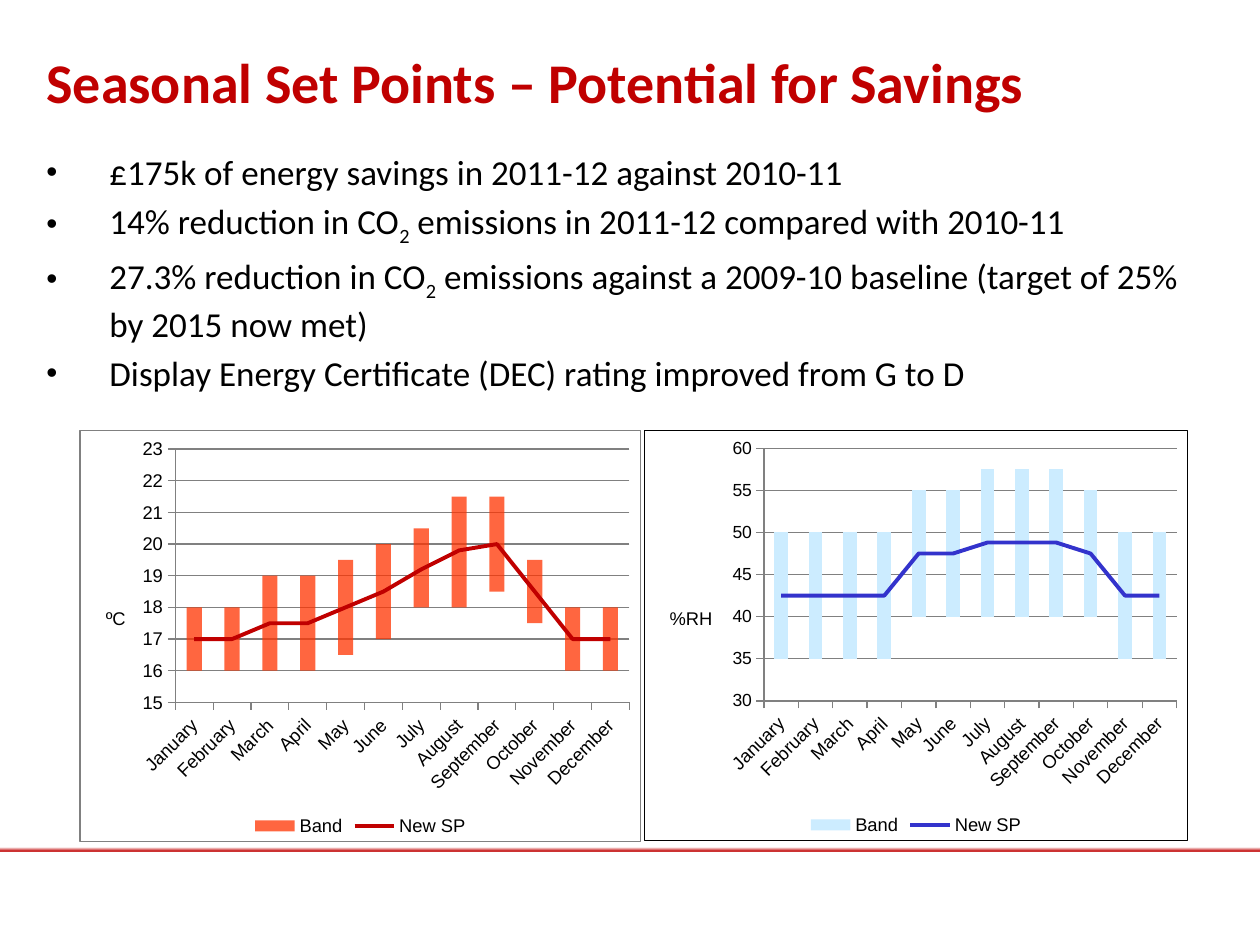
from pptx import Presentation
from pptx.chart.data import CategoryChartData as Data
from pptx.dml.color import RGBColor as Rgb
from pptx.enum.chart import XL_CHART_TYPE as Kind, XL_LEGEND_POSITION as Spot
from pptx.enum.chart import XL_MARKER_STYLE as Mark, XL_TICK_MARK as Tick
from pptx.enum.shapes import MSO_SHAPE as Shape
from pptx.oxml import parse_xml
from pptx.oxml.ns import nsdecls, qn
from pptx.util import Inches, Pt

WIDE, HIGH = Inches(10), Inches(7.5)
LEFT, SPAN = 0.027, 0.945
MONTHS = ["January", "February", "March", "April", "May", "June", "July",
          "August", "September", "October", "November", "December"]
POINTS = [
    "£175k of energy savings in 2011-12 against 2010-11",
    "14% reduction in CO|2| emissions in 2011-12 compared with 2010-11",
    "27.3% reduction in CO|2| emissions against a 2009-10 baseline "
    "(target of 25% by 2015 now met)",
    "Display Energy Certificate (DEC) rating improved from G to D",
]
HEAT = dict(
    box=(0.063, 0.455, 0.446, 0.436), plot=(0.17, 0.045, 0.81, 0.617),
    unit="ºC", low=15, high=23, step=1, size=10.5, edge="808080",
    band="FF3300", solid=75, line="C00000",
    base=[16, 16, 16, 16, 16.5, 17, 18, 18, 18.5, 17.5, 16, 16],
    range=[2, 2, 3, 3, 3, 3, 2.5, 3.5, 3, 2, 2, 2],
    goal=[17, 17, 17.5, 17.5, 18, 18.5, 19.2, 19.8, 20, 18.5, 17, 17])
DAMP = dict(
    box=(0.511, 0.455, 0.432, 0.435), plot=(0.22, 0.043, 0.76, 0.617),
    unit="%RH", low=30, high=60, step=5, size=10, edge="000000",
    band="CCECFF", solid=100, line="3333CC",
    base=[35] * 4 + [40] * 6 + [35] * 2,
    range=[15] * 6 + [17.5] * 3 + [15] * 3,
    goal=[42.5] * 4 + [47.5] * 2 + [48.8] * 3 + [47.5] + [42.5] * 2)


def place(x, y, w, h):
    """Turn shares of the slide into lengths."""
    return int(x * WIDE), int(y * HIGH), int(w * WIDE), int(h * HIGH)


def tint(color, code):
    """Set a colour from a hex string."""
    color.rgb = Rgb.from_string(code)


def style(font, size, code="000000", name="Calibri", bold=False):
    """Give a font its size, colour, face and weight."""
    for key, value in dict(size=Pt(size), name=name, bold=bold).items():
        setattr(font, key, value)
    tint(font.color, code)


def paint(form, code, width):
    """Draw a line in one colour and width."""
    tint(form.line.color, code)
    form.line.width = Pt(width)


def add_rule(slide):
    """Add the fading red rule near the foot."""
    bar = slide.shapes.add_shape(Shape.RECTANGLE, *place(0, 0.891, 1, 0.011))
    bar.shadow.inherit = False
    bar.line.fill.background()
    bar.fill.gradient()
    bar.fill.gradient_angle = 90
    for stop, (spot, code) in zip(bar.fill.gradient_stops,
                                  [(0.18, "CC3333"), (0.5, "FFFFFF")]):
        stop.position = spot
        tint(stop.color, code)


def add_frame(slide, y, h):
    """Add a wrapping text box across the slide."""
    frame = slide.shapes.add_textbox(*place(LEFT, y, SPAN, h)).text_frame
    frame.word_wrap = True
    return frame


def add_title(slide, text):
    """Add the heading."""
    run = add_frame(slide, 0.044, 0.071).paragraphs[0].add_run()
    run.text = text
    style(run.font, 32, "C00000", bold=True)


def add_list(slide, items):
    """Add bullets, with text between bars set as subscript."""
    frame = add_frame(slide, 0.153, 0.271)
    for row, item in enumerate(items):
        para = frame.add_paragraph() if row else frame.paragraphs[0]
        props = para._p.get_or_add_pPr()
        for key, value in dict(marL=Inches(0.5), indent=-Inches(0.5)).items():
            props.set(key, str(value))
        for tag in ('buSzPct val="90000"', 'buFont typeface="Arial"',
                    'buChar char="•"'):
            props.append(parse_xml(f"<a:{tag} {nsdecls('a')}/>"))
        para.space_before = Pt(4 if row else 0)
        for part, text in enumerate(item.split("|")):
            run = para.add_run()
            run.text = text
            style(run.font, 20)
            if part % 2:
                run._r.get_or_add_rPr().set("baseline", "-25000")


def pin(node, index, **shares):
    """Fix the place of a chart part by shares of the chart."""
    for old in node.findall(qn("c:layout")):
        node.remove(old)
    inner = '<c:layoutTarget val="inner"/>' if "w" in shares else ""
    modes = "".join(f'<c:{k}Mode val="edge"/>' for k in "xy")
    sizes = "".join(f'<c:{k} val="{v}"/>' for k, v in shares.items())
    node.insert(index, parse_xml(
        f"<c:layout {nsdecls('c')}><c:manualLayout>{inner}{modes}{sizes}"
        "</c:manualLayout></c:layout>"))


def split_line(chart):
    """Move the last series into a line plot on the same axes."""
    bars = chart.element.find(".//" + qn("c:barChart"))
    last = bars.findall(qn("c:ser"))[-1]
    for odd in last.findall(qn("c:invertIfNegative")):
        last.remove(odd)
    axes = "".join(f'<c:axId val="{a.get("val")}"/>'
                   for a in bars.findall(qn("c:axId")))
    plot = parse_xml(
        f"<c:lineChart {nsdecls('c')}><c:grouping val=\"standard\"/>"
        f'<c:varyColors val="0"/><c:marker val="1"/>{axes}</c:lineChart>')
    plot.insert(2, last)
    bars.addnext(plot)


def set_series(chart, info):
    """Colour the hidden base, the band and the line."""
    bars, lines = chart.plots
    for key, value in dict(gap_width=150, overlap=100,
                           vary_by_categories=False).items():
        setattr(bars, key, value)
    base, band = bars.series
    base.format.fill.background()
    band.format.fill.solid()
    tint(band.format.fill.fore_color, info["band"])
    if info["solid"] < 100:
        code = band.format.fill._xPr.find(".//" + qn("a:srgbClr"))
        code.append(parse_xml(
            f'<a:alpha {nsdecls("a")} val="{info["solid"] * 1000}"/>'))
    goal = lines.series[0]
    goal.smooth = False
    goal.marker.style = Mark.NONE
    paint(goal.format, info["line"], 2.25)


def set_axes(chart, info):
    """Set scale, grid, labels and unit."""
    cat, val = chart.category_axis, chart.value_axis
    for key, value in dict(minimum_scale=info["low"],
                           maximum_scale=info["high"],
                           major_unit=info["step"]).items():
        setattr(val, key, value)
    for axis, size in ((cat, 10.5), (val, info["size"])):
        axis.major_tick_mark = Tick.CROSS if axis is val else Tick.OUTSIDE
        axis.minor_tick_mark = Tick.NONE
        paint(axis.format, "808080", 0.75)
        style(axis.tick_labels.font, size, name="Arial")
    cat.has_major_gridlines = False
    turn = cat._element.find(qn("c:txPr")).find(qn("a:bodyPr"))
    turn.set("rot", "-2700000")
    val.has_major_gridlines = True
    paint(val.major_gridlines.format, "808080", 0.75)
    frame = val.axis_title.text_frame
    frame.text = info["unit"]
    style(frame.paragraphs[0].runs[0].font, 10.5, name="Arial")
    for key, value in dict(rot="0", vert="horz").items():
        frame._txBody.find(qn("a:bodyPr")).set(key, value)
    pin(val.axis_title._element, 1, x=0.04, y=0.42)


def add_combo(slide, info):
    """Add a floating band chart with a set point line."""
    data = Data()
    data.categories = MONTHS
    for name, key in (("Series 1", "base"), ("Band", "range"),
                      ("New SP", "goal")):
        data.add_series(name, info[key])
    chart = slide.shapes.add_chart(
        Kind.COLUMN_STACKED, *place(*info["box"]), data).chart
    style(chart.font, 10.5, name="Arial")
    chart.has_title = False
    split_line(chart)
    set_series(chart, info)
    set_axes(chart, info)
    chart.has_legend = True
    chart.legend.position = Spot.BOTTOM
    chart.legend.include_in_layout = False
    style(chart.legend.font, 10.5, name="Arial")
    chart.legend._element.insert(1, parse_xml(
        f'<c:legendEntry {nsdecls("c")}><c:idx val="0"/>'
        '<c:delete val="1"/></c:legendEntry>'))
    root = chart.element.find(qn("c:chart"))
    pin(root.find(qn("c:plotArea")), 0, **dict(zip("xywh", info["plot"])))
    root.addnext(parse_xml(
        f'<c:spPr {nsdecls("c", "a")}><a:solidFill><a:srgbClr val="FFFFFF"/>'
        '</a:solidFill><a:ln w="9525"><a:solidFill>'
        f'<a:srgbClr val="{info["edge"]}"/></a:solidFill></a:ln></c:spPr>'))


def main():
    """Build and save the slide."""
    deck = Presentation()
    deck.slide_width, deck.slide_height = WIDE, HIGH
    slide = deck.slides.add_slide(deck.slide_layouts[6])
    add_rule(slide)
    add_title(slide, "Seasonal Set Points – Potential for Savings")
    add_list(slide, POINTS)
    for info in (HEAT, DAMP):
        add_combo(slide, info)
    deck.save("out.pptx")


if __name__ == "__main__":
    main()
